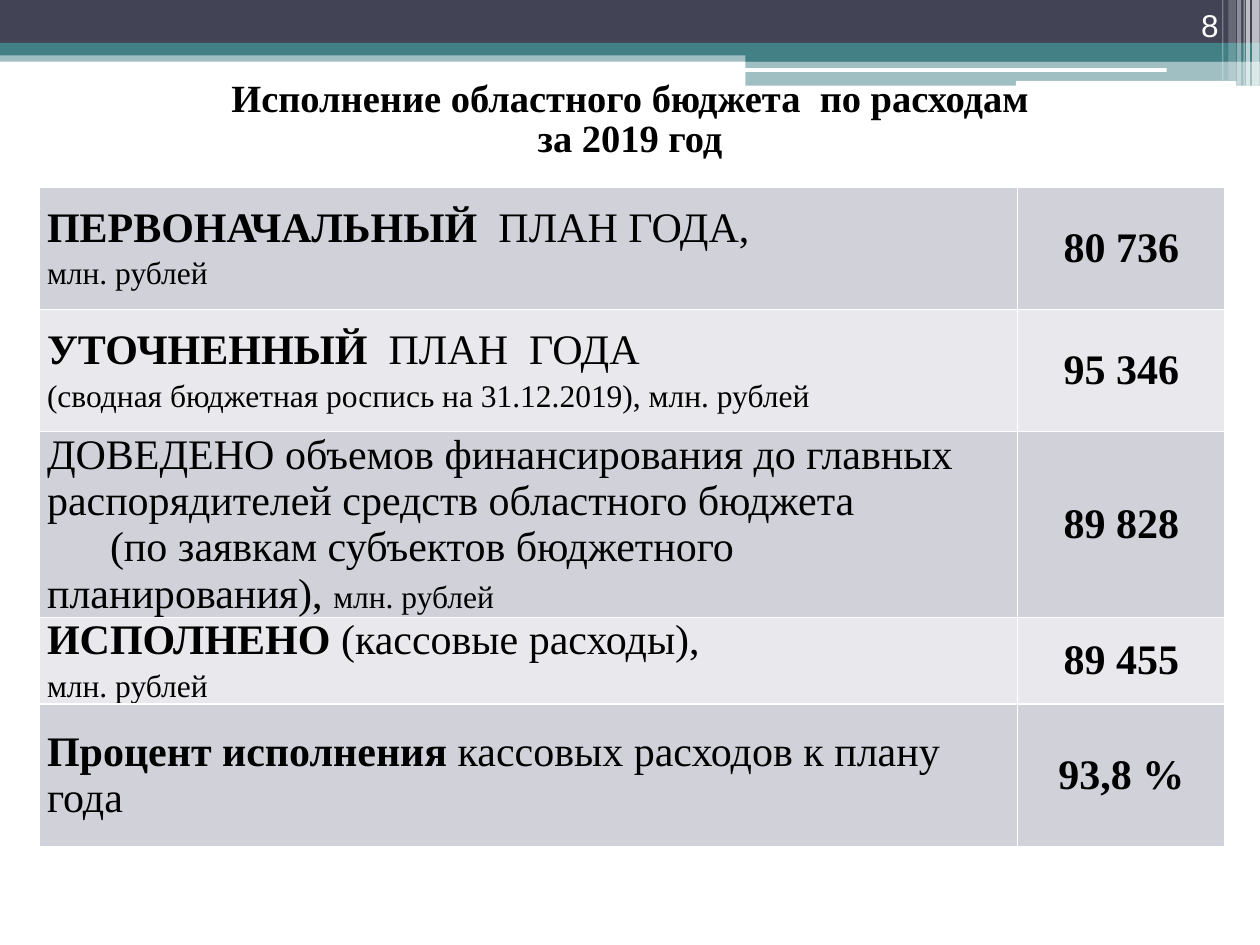
from lxml import etree
from pptx import Presentation
from pptx.dml.color import RGBColor
from pptx.enum import shapes, text
from pptx.oxml import ns
from pptx.util import Pt

DARK = RGBColor(0x42, 0x44, 0x56)
TEAL = RGBColor(0x43, 0x80, 0x86)
WHITE = RGBColor(0xFF, 0xFF, 0xFF)
BLACK = RGBColor(0, 0, 0)
ROW_FILLS = RGBColor(0xD1, 0xD1, 0xDA), RGBColor(0xE9, 0xE9, 0xED)
SERIF, SANS = "Times New Roman", "Arial"
RECT, ROUND = shapes.MSO_SHAPE.RECTANGLE, shapes.MSO_SHAPE.ROUNDED_RECTANGLE
CENTER, LEFT, RIGHT = text.PP_ALIGN.CENTER, text.PP_ALIGN.LEFT, text.PP_ALIGN.RIGHT

TITLE = ["Исполнение областного бюджета  по расходам", "за 2019 год"]
PAGE = "8"

# Each row: height, label paragraphs of (text, size, bold) runs, value
ROWS = [
    (69.84, [[("ПЕРВОНАЧАЛЬНЫЙ", 24, True), ("  ПЛАН ГОДА,", 24, False)],
             [("млн. рублей", 18, False)]], "80 736"),
    (69.84, [[("УТОЧНЕННЫЙ  ", 24, True), ("ПЛАН  ГОДА", 24, False)],
             [("(сводная бюджетная роспись на 31.12.2019), млн. рублей", 18, False)]], "95 346"),
    (93.6, [[("ДОВЕДЕНО объемов финансирования до главных "
              "распорядителей средств областного бюджета", 24, False)],
            [("(по заявкам субъектов бюджетного планирования), ", 24, False),
             ("млн. рублей", 18, False)]], "89 828"),
    (41.04, [[("ИСПОЛНЕНО ", 24, True), ("(кассовые расходы),", 24, False)],
             [("млн. рублей", 18, False)]], "89 455"),
    (81.36, [[("Процент исполнения ", 24, True),
              ("кассовых расходов к плану года", 24, False)]], "93,8 %"),
]
COLS = 558.72, 118.8
INDENTED = (2, 1)  # row and paragraph that continue with a first-line indent

# Header bands: shape, left, top, width, height, colour, opacity in percent
BANDS = [
    (RECT, 0, 28.8, 720, 6.48, TEAL, 50),
    (RECT, 0, 0, 720, 24.48, DARK, 100),
    (RECT, 0, 24.48, 720, 7.2, TEAL, 100),
    (RECT, 426, 28.08, 294, 7.2, TEAL, 100),
    (RECT, 426, 34.8, 294, 14.2, TEAL, 50),
    (ROUND, 425.5, 38.9, 241.2, 2.2, WHITE, 100),
    (ROUND, 580.5, 46.3, 126, 2.9, WHITE, 100),
]
# White stripes at the right edge: left, width, height, opacity
STRIPES = [(715.5, 4.3, 49, 65), (712, 2.2, 49, 65), (710.6, 0.72, 49, 60),
           (707, 2.2, 49, 40), (702, 4.3, 46, 20), (698.4, 0.72, 46, 30)]
BANDS += [(RECT, x, 0, w, h, WHITE, a) for x, w, h, a in STRIPES]


def set_all(obj, values):
    for name, value in values.items():
        setattr(obj, name, value)


def add_run(p, words, size, bold=False, font=SERIF, color=BLACK):
    r = p.add_run()
    r.text = words
    set_all(r.font, {"name": font, "size": Pt(size), "bold": bold})
    r.font.color.rgb = color


def add_band(s, kind, x, y, w, h, color, opacity):
    sp = s.shapes.add_shape(kind, Pt(x), Pt(y), Pt(w), Pt(h))
    sp.shadow.inherit = False
    sp.line.fill.background()
    sp.fill.solid()
    sp.fill.fore_color.rgb = color
    if opacity < 100:
        clr = sp.element.spPr.find(".//" + ns.qn("a:srgbClr"))
        etree.SubElement(clr, ns.qn("a:alpha"), val=str(opacity * 1000))


def fill_cell(cell, paragraphs, align, color):
    set_all(cell, {"margin_left": Pt(4.3), "margin_right": Pt(4.3), "margin_top": 0,
                   "margin_bottom": 0, "vertical_anchor": text.MSO_ANCHOR.MIDDLE})
    tf = cell.text_frame
    for i, runs in enumerate(paragraphs):
        p = tf.add_paragraph() if i else tf.paragraphs[0]
        set_all(p, {"alignment": align, "space_before": Pt(3)})
        for run in runs:
            add_run(p, *run)
    # Borders come before the fill in the cell properties
    tcPr = cell._tc.get_or_add_tcPr()
    for side in ("a:lnL", "a:lnR", "a:lnT", "a:lnB"):
        ln = etree.SubElement(tcPr, ns.qn(side), w=str(Pt(1)))
        solid = etree.SubElement(ln, ns.qn("a:solidFill"))
        etree.SubElement(solid, ns.qn("a:srgbClr"), val=str(WHITE))
    cell.fill.solid()
    cell.fill.fore_color.rgb = color


def main():
    prs = Presentation()
    set_all(prs, {"slide_width": Pt(720), "slide_height": Pt(540)})
    s = prs.slides.add_slide(prs.slide_layouts[5])

    # Header
    for band in BANDS:
        add_band(s, *band)

    # Title, in front of the bands
    title = s.shapes.title
    title.element.getparent().append(title.element)
    set_all(title, {"left": 0, "top": Pt(43.2), "width": Pt(720), "height": Pt(49)})
    tf = title.text_frame
    set_all(tf, {"margin_left": Pt(4.3), "margin_right": Pt(4.3), "margin_top": Pt(0.7),
                 "margin_bottom": Pt(0.7), "word_wrap": True,
                 "auto_size": text.MSO_AUTO_SIZE.NONE,
                 "vertical_anchor": text.MSO_ANCHOR.BOTTOM})
    for i, line in enumerate(TITLE):
        p = tf.add_paragraph() if i else tf.paragraphs[0]
        set_all(p, {"alignment": CENTER, "line_spacing": 0.86, "space_before": Pt(0)})
        add_run(p, line, 22, True)

    # Budget table
    frame = s.shapes.add_table(len(ROWS), len(COLS), Pt(22.6), Pt(107), Pt(sum(COLS)),
                               Pt(sum(row[0] for row in ROWS)))
    table = frame.table
    set_all(table, {"first_row": False, "horz_banding": False})
    for col, width in zip(table.columns, COLS):
        col.width = Pt(width)
    for i, (height, label, value) in enumerate(ROWS):
        table.rows[i].height = Pt(height)
        color = ROW_FILLS[i % 2]
        fill_cell(table.cell(i, 0), label, LEFT, color)
        fill_cell(table.cell(i, 1), [[(value, 24, True)]], CENTER, color)
    row, para = INDENTED
    p = table.cell(row, 0).text_frame.paragraphs[para]
    p.space_before = Pt(0)
    p._p.get_or_add_pPr().set("indent", str(Pt(36)))

    # Page number
    tf = s.shapes.add_textbox(Pt(643.7), 0, Pt(59.8), Pt(28.8)).text_frame
    set_all(tf, {"word_wrap": True, "vertical_anchor": text.MSO_ANCHOR.BOTTOM})
    tf.paragraphs[0].alignment = RIGHT
    add_run(tf.paragraphs[0], PAGE, 18, font=SANS, color=WHITE)

    prs.save("out.pptx")


if __name__ == "__main__":
    main()
